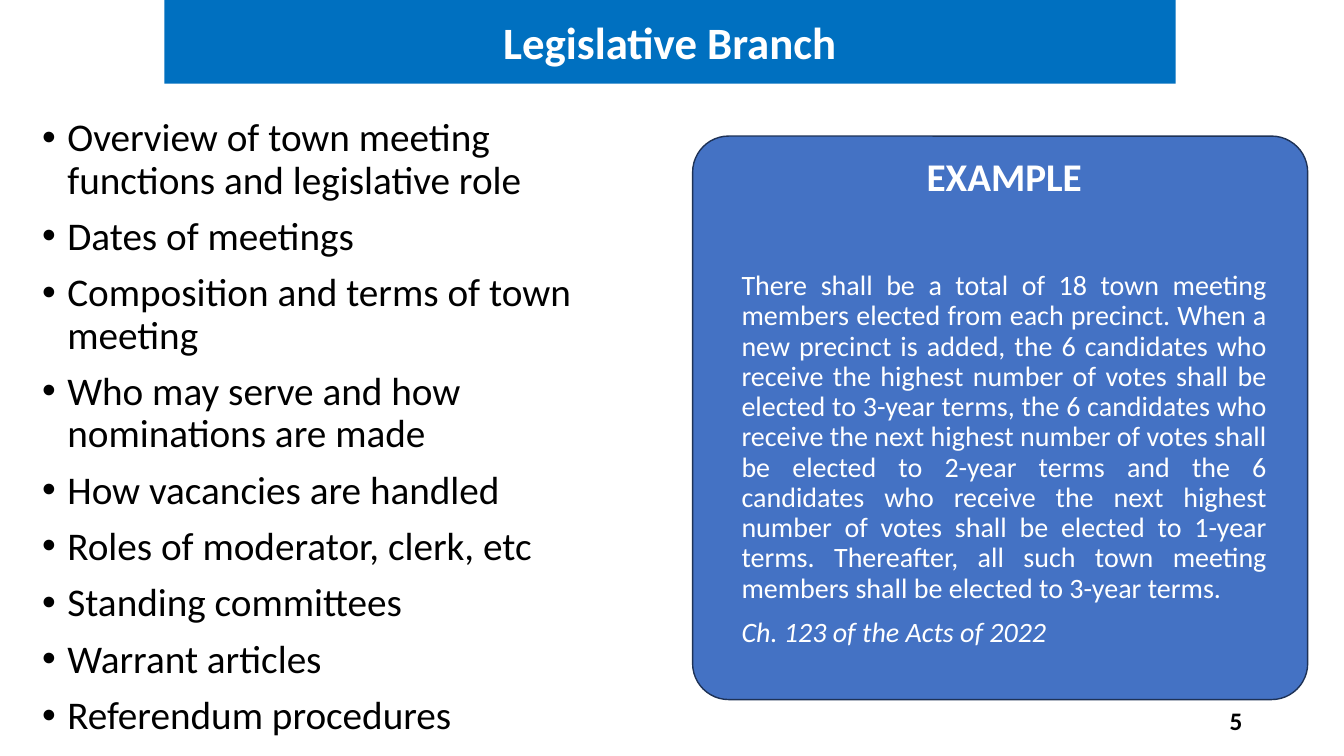
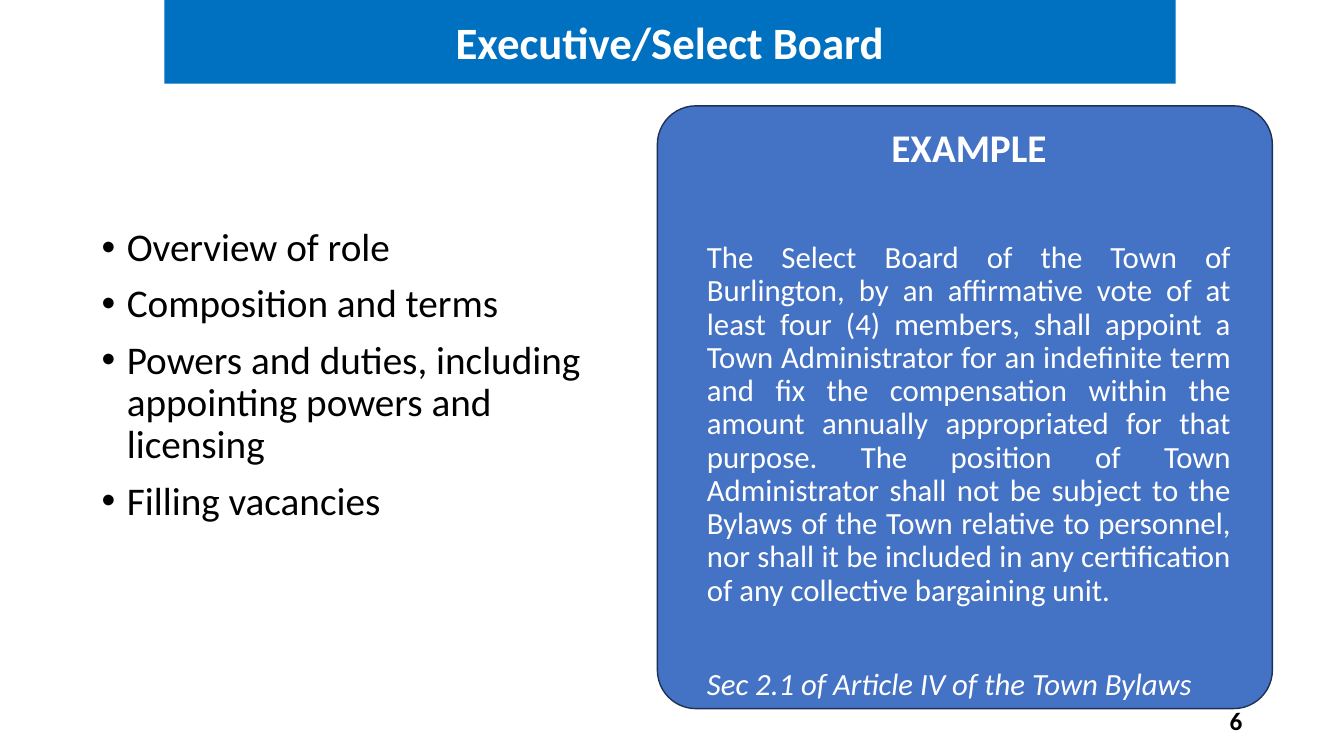
from dataclasses import dataclass

from pptx import Presentation
from pptx.dml.color import RGBColor
from pptx.enum.shapes import MSO_SHAPE as Shape
from pptx.enum.text import MSO_ANCHOR as Anchor, MSO_AUTO_SIZE as AutoSize, PP_ALIGN as Align
from pptx.oxml.ns import qn
from pptx.util import Inches, Pt
from lxml.etree import SubElement


@dataclass(frozen=True)
class Theme:
    font: str = "Calibri"
    band: str = "0070C0"
    panel: str = "4472C4"
    outline: str = "1E3256"
    dark: str = "000000"
    light: str = "FFFFFF"
    title: int = 32
    body: int = 28
    number: int = 18
    line_spacing: float = 0.9
    gap: int = 10


class Builder:
    def __init__(self, theme):
        self.theme = theme
        self.deck = Presentation()
        self.deck.slide_width = Inches(13.33)
        self.deck.slide_height = Inches(7.5)
        self.page = None

    def style(self, para, size, color, bold=False, italic=False, align=Align.LEFT):
        para.alignment = align
        font = para.font
        font.name = self.theme.font
        font.size = Pt(size)
        font.bold = bold
        font.italic = italic
        font.color.rgb = RGBColor.from_string(color)

    def space(self, para, before):
        para.line_spacing = self.theme.line_spacing
        para.space_before = Pt(before)

    def fill(self, shape, color):
        shape.fill.solid()
        shape.fill.fore_color.rgb = RGBColor.from_string(color)

    def paragraphs(self, frame, texts):
        for index, text in enumerate(texts):
            para = frame.add_paragraph() if index else frame.paragraphs[0]
            para.text = text
            yield para

    def text_box(self, left, top, width, height):
        box = self.page.shapes.add_textbox(Inches(left), Inches(top), Inches(width), Inches(height))
        box.text_frame.word_wrap = True
        return box.text_frame

    def add_page(self, title, number):
        theme = self.theme
        self.page = self.deck.slides.add_slide(self.deck.slide_layouts[5])
        band = self.page.shapes.title
        band.left, band.top = Inches(1.63), Inches(0)
        band.width, band.height = Inches(10.03), Inches(0.83)
        self.fill(band, theme.band)
        frame = band.text_frame
        frame.text = title
        frame.auto_size = AutoSize.NONE
        frame.vertical_anchor = Anchor.MIDDLE
        self.style(frame.paragraphs[0], theme.title, theme.light, bold=True, align=Align.CENTER)

        frame = self.text_box(9.42, 6.95, 3, 0.4)
        frame.text = str(number)
        frame.vertical_anchor = Anchor.MIDDLE
        self.style(frame.paragraphs[0], theme.number, theme.dark, bold=True, align=Align.RIGHT)

    def bullets(self, left, top, width, height, items):
        theme = self.theme
        frame = self.text_box(left, top, width, height)
        for index, para in enumerate(self.paragraphs(frame, items)):
            properties = para._p.get_or_add_pPr()
            properties.set("marL", str(Inches(0.25)))
            properties.set("indent", str(Inches(-0.25)))
            SubElement(properties, qn("a:buFont"), typeface="Arial")
            SubElement(properties, qn("a:buChar"), char="•")
            self.space(para, theme.gap if index else 0)
            self.style(para, theme.body, theme.dark)

    def example(self, left, top, height, quote, source, size, source_gap):
        theme = self.theme
        panel = self.page.shapes.add_shape(
            Shape.ROUNDED_RECTANGLE, Inches(left), Inches(top), Inches(6.1), Inches(height))
        panel.adjustments[0] = 0.064
        panel.shadow.inherit = False
        self.fill(panel, theme.panel)
        panel.line.color.rgb = RGBColor.from_string(theme.outline)
        panel.line.width = Pt(1)

        frame = panel.text_frame
        frame.word_wrap = True
        frame.vertical_anchor = Anchor.TOP
        frame.margin_left, frame.margin_right = Inches(0.38), Inches(0.3)
        frame.margin_top, frame.margin_bottom = Inches(0.11), Inches(0)
        heading, body, citation = self.paragraphs(frame, ["EXAMPLE", quote, source])
        for para, before in ((heading, 0), (body, 51), (citation, source_gap)):
            self.space(para, before)
        self.style(heading, theme.body, theme.light, bold=True, align=Align.CENTER)
        self.style(body, size, theme.light, align=Align.JUSTIFY)
        self.style(citation, size, theme.light, italic=True, align=Align.JUSTIFY)


def main():
    builder = Builder(Theme())

    builder.add_page("Legislative Branch", 5)
    builder.bullets(0.32, 1.12, 6.06, 6.3, [
        "Overview of town meeting functions and legislative role",
        "Dates of meetings",
        "Composition and terms of town meeting",
        "Who may serve and how nominations are made",
        "How vacancies are handled",
        "Roles of moderator, clerk, etc",
        "Standing committees",
        "Warrant articles",
        "Referendum procedures",
    ])
    builder.example(
        6.87, 1.35, 5.59,
        "There shall be a total of 18 town meeting members elected from each precinct. "
        "When a new precinct is added, the 6 candidates who receive the highest number of votes "
        "shall be elected to 3-year terms, the 6 candidates who receive the next highest number "
        "of votes shall be elected to 2-year terms and the 6 candidates who receive the next "
        "highest number of votes shall be elected to 1-year terms. Thereafter, all such town "
        "meeting members shall be elected to 3-year terms.",
        "Ch. 123 of the Acts of 2022", size=20, source_gap=10)

    builder.add_page("Executive/Select Board", 6)
    builder.bullets(0.91, 2.21, 5.43, 5.04, [
        "Overview of role",
        "Composition and terms",
        "Powers and duties, including appointing powers and licensing",
        "Filling vacancies",
    ])
    builder.example(
        6.52, 1.05, 5.98,
        "The Select Board of the Town of Burlington, by an affirmative vote of at least four (4) "
        "members, shall appoint a Town Administrator for an indefinite term and fix the "
        "compensation within the amount annually appropriated for that purpose. The position of "
        "Town Administrator shall not be subject to the Bylaws of the Town relative to personnel, "
        "nor shall it be included in any certification of any collective bargaining unit.",
        "Sec 2.1 of Article IV of the Town Bylaws", size=22, source_gap=44)

    builder.deck.save("out.pptx")


if __name__ == "__main__":
    main()
